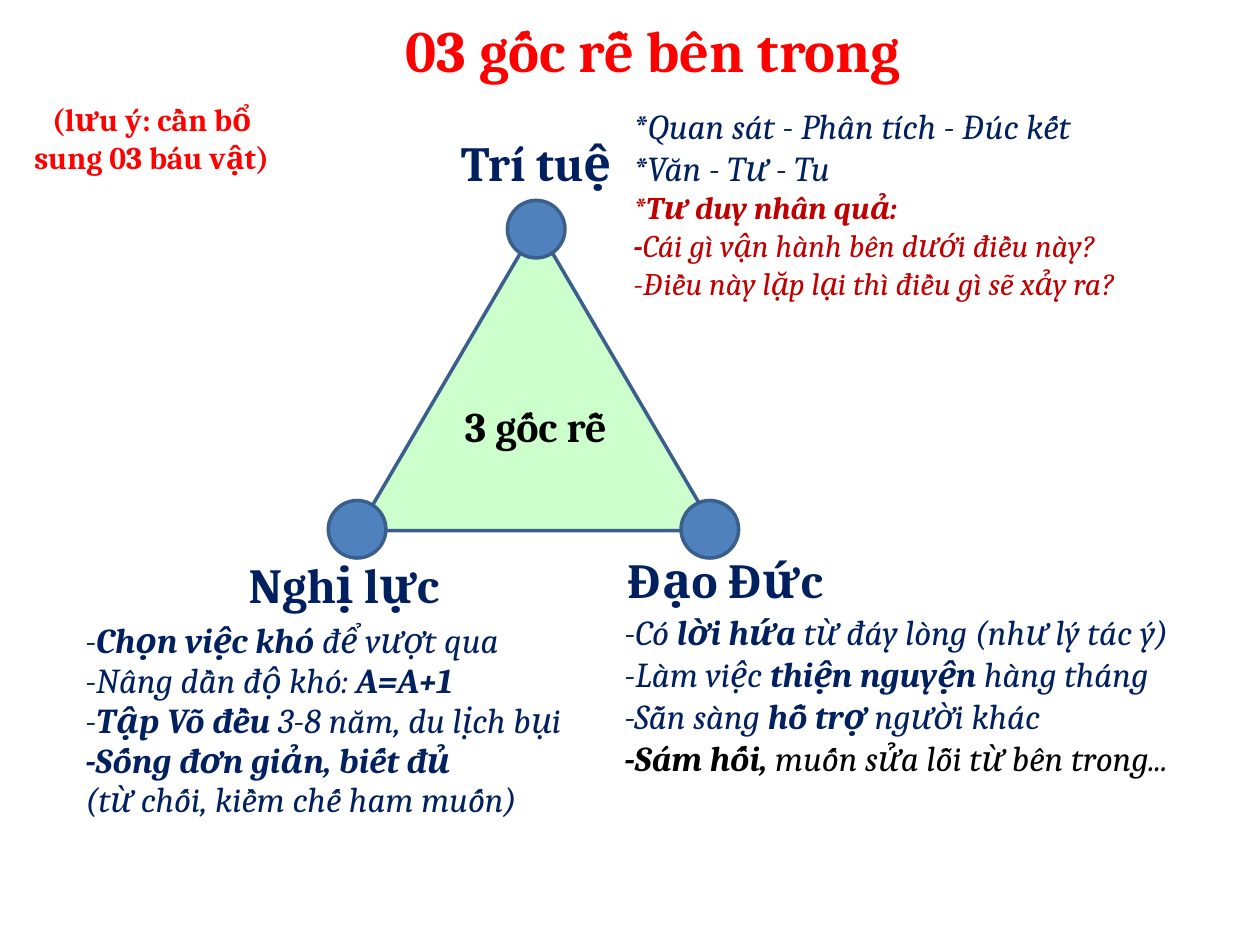
import pptx
import pptx.util
import pptx.dml.color
import pptx.enum.shapes
import pptx.enum.text

Cm, Pt = pptx.util.Cm, pptx.util.Pt
RGB = pptx.dml.color.RGBColor.from_string
SHAPE = pptx.enum.shapes.MSO_SHAPE
ALIGN = pptx.enum.text.PP_ALIGN
FIT = pptx.enum.text.MSO_AUTO_SIZE

THEME = {
    "font": "Cambria",
    "navy": "002060", "red": "FF0000", "dark_red": "C00000", "black": "000000",
    "leaf": "CCFFCC", "node": "4F81BD", "outline": "3A5F8C",
    "title": 33.3, "corner": 28, "center": 24, "body": 20, "small": 18,
}

# Content: **bold** marks bold words, a newline is a line break
TITLE = "03 gốc rễ bên trong"
TITLE_BOX = (4.24, 0.2, 17.86, 1.6)

# Headings: text, size, colour, box in cm, wrap
HEADINGS = [
    ("Trí tuệ", "corner", "navy", (6.71, 2.54, 8.2, 1.45), True),
    ("Nghị lực", "corner", "navy", (3.66, 11.05, 6.55, 1.45), True),
    ("Đạo Đức", "corner", "navy", (11.38, 10.95, 6.48, 1.45), True),
    ("3 gốc rễ", "center", "black", (9.02, 7.95, 3.56, 1.27), False),
    ("(lưu ý: cần bổ sung 03 báu vật)", "small", "red", (0.2, 1.9, 5.72, 1.8), True),
]

# Notes: box in cm, wrap, line spacing, paragraphs of (text, size, colour)
NOTES = [
    ((12.52, 1.98, 10.64, 4.27), True, None, [
        ("*Quan sát - Phân tích - Đúc kết", "body", "navy"),
        ("*Văn - Tư - Tu", "body", "navy"),
        ("***Tư duy nhân quả: \n-**Cái gì vận hành bên dưới điều này?\n"
         "-Điều này lặp lại thì điều gì sẽ xảy ra?", "small", "dark_red"),
    ]),
    ((1.47, 12.4, 10.24, 4.32), True, 0.95, [
        ("-**Chọn việc khó **để vượt qua", "body", "navy"),
        ("-Nâng dần độ khó: **A=A+1**", "body", "navy"),
        ("-**Tập Võ đều **3-8 năm, du lịch bụi", "body", "navy"),
        ("**-Sống đơn giản, biết đủ\n**(từ chối, kiềm chế ham muốn)", "body", "navy"),
    ]),
    ((12.34, 12.19, 11.73, 3.68), False, None, [
        ("-Có **lời hứa **từ đáy lòng (như lý tác ý)", "body", "navy"),
        ("-Làm việc **thiện nguyện **hàng tháng", "body", "navy"),
        ("-Sẵn sàng **hỗ trợ **người khác", "body", "navy"),
        ("**-Sám hối, **muốn sửa lỗi từ bên trong...", "body", "black"),
    ]),
]

TRIANGLE = (7.21, 4.55, 7.21, 6.15)
NODE_SIZE = 1.16
NODE_CENTERS = [(7.2, 10.67), (14.31, 10.67), (10.81, 4.62)]


def style(font, size, color):
    font.name = THEME["font"]
    font.size = Pt(THEME[size])
    font.color.rgb = RGB(THEME[color])


def add_figure(s, kind, box, fill):
    sp = s.shapes.add_shape(kind, *map(Cm, box))
    sp.shadow.inherit = False
    sp.fill.solid()
    sp.fill.fore_color.rgb = RGB(THEME[fill])
    sp.line.color.rgb = RGB(THEME["outline"])
    sp.line.width = Pt(2)


def add_box(s, box, wrap):
    tf = s.shapes.add_textbox(*map(Cm, box)).text_frame
    tf.word_wrap = wrap
    tf.auto_size = FIT.SHAPE_TO_FIT_TEXT
    return tf


def add_heading(s, text, size, color, box, wrap):
    p = add_box(s, box, wrap).paragraphs[0]
    p.text = text
    p.alignment = ALIGN.CENTER
    style(p.font, size, color)
    p.font.bold = True


def add_marked_runs(p, text):
    for i, part in enumerate(text.split("**")):
        for j, line in enumerate(part.split("\n")):
            if j:
                p.add_line_break()
            if line:
                r = p.add_run()
                r.text = line
                r.font.bold = i % 2 == 1


def add_note(s, box, wrap, spacing, paragraphs):
    tf = add_box(s, box, wrap)
    for i, (text, size, color) in enumerate(paragraphs):
        p = tf.add_paragraph() if i else tf.paragraphs[0]
        # A leading asterisk is plain text in front of the bold marks
        if text.startswith("*") and not text.startswith("**-"):
            p.add_run().text = "*"
            text = text[1:]
        add_marked_runs(p, text)
        p.line_spacing = spacing
        style(p.font, size, color)
        p.font.italic = True


def main():
    prs = pptx.Presentation()
    prs.slide_width, prs.slide_height = Cm(25.4), Cm(19.05)
    s = prs.slides.add_slide(prs.slide_layouts[5])

    # Title
    sp = s.shapes.title
    sp.left, sp.top, sp.width, sp.height = map(Cm, TITLE_BOX)
    tf = sp.text_frame
    tf.text = TITLE
    tf.auto_size = FIT.NONE
    tf.vertical_anchor = pptx.enum.text.MSO_ANCHOR.MIDDLE
    p = tf.paragraphs[0]
    p.alignment = ALIGN.CENTER
    style(p.font, "title", "red")
    p.font.bold = True

    # Triangle with a node on each corner
    add_figure(s, SHAPE.ISOSCELES_TRIANGLE, TRIANGLE, "leaf")
    for x, y in NODE_CENTERS:
        box = (x - NODE_SIZE / 2, y - NODE_SIZE / 2, NODE_SIZE, NODE_SIZE)
        add_figure(s, SHAPE.OVAL, box, "node")

    # Headings and notes
    for heading in HEADINGS:
        add_heading(s, *heading)
    for note in NOTES:
        add_note(s, *note)

    prs.save("out.pptx")


if __name__ == "__main__":
    main()
